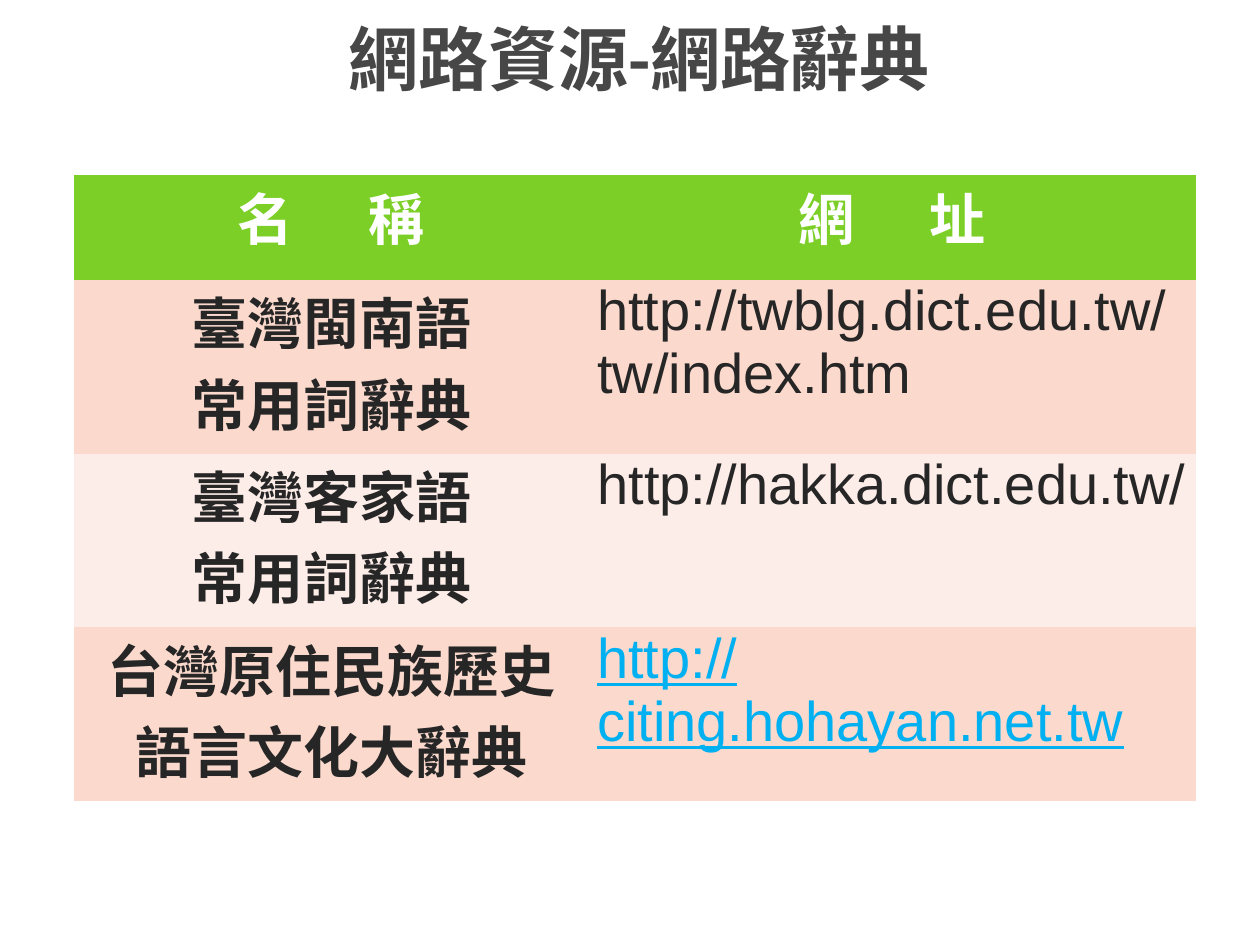
"""Build a slide that lists online dictionaries in a table."""
import pptx
import pptx.dml.color
import pptx.enum.text
import pptx.util

Inches = pptx.util.Inches
ALIGN = pptx.enum.text.PP_ALIGN
NO_STYLE = "{2D5ABB26-0587-4C30-8999-92F81FD0307C}"
INK = "262626"
LINK = "00B0F0"
WHITE = "FFFFFF"
HEADER_FILL = "7BCF27"
BAND_FILLS = ("FBDACD", "FDEDE8")
HEADERS = ("名稱", "網址")
DICTIONARIES = (
    ("臺灣閩南語\n常用詞辭典", "http://twblg.dict.edu.tw/tw/index.htm", ALIGN.LEFT, INK),
    ("臺灣客家語\n常用詞辭典", "http://hakka.dict.edu.tw/", ALIGN.CENTER, INK),
    ("台灣原住民族歷史語言文化大辭典", "http://citing.hohayan.net.tw", ALIGN.LEFT, LINK),
)


def color(value):
    """Return the colour for a hex string."""
    return pptx.dml.color.RGBColor.from_string(value)


def style_font(font, name, size, ink, bold):
    """Set the main properties of a font."""
    font.name = name
    font.size = pptx.util.Pt(size)
    font.bold = bold
    font.color.rgb = color(ink)


def add_title(slide, text):
    """Place and format the title."""
    title = slide.shapes.title
    title.left, title.top = Inches(0.48), Inches(0.08)
    title.width, title.height = Inches(9.19), Inches(0.75)
    title.text_frame.text = text
    title.text_frame.vertical_anchor = pptx.enum.text.MSO_ANCHOR.MIDDLE
    paragraph = title.text_frame.paragraphs[0]
    paragraph.alignment = ALIGN.CENTER
    style_font(paragraph.runs[0].font, "Calibri", 40, "474747", True)


def add_table(slide):
    """Add the empty two-column table without a built-in style."""
    frame = slide.shapes.add_table(
        len(DICTIONARIES) + 1, 2, Inches(0.59), Inches(1.39), Inches(8.9), Inches(4.97)
    )
    frame.element.xpath(".//a:tableStyleId")[0].text = NO_STYLE
    table = frame.table
    for column, width in zip(table.columns, (4.08, 4.82)):
        column.width = Inches(width)
    for index, row in enumerate(table.rows):
        row.height = Inches(1.38 if index else 0.83)
    return table


def fill_cell(cell, text, fill, ink, bold=True, alignment=ALIGN.CENTER):
    """Write and format one table cell."""
    cell.fill.solid()
    cell.fill.fore_color.rgb = color(fill)
    cell.margin_left = cell.margin_right = Inches(0.07)
    cell.margin_top = cell.margin_bottom = 0
    cell.text_frame.text = text
    for paragraph in cell.text_frame.paragraphs:
        paragraph.alignment = alignment
        for run in paragraph.runs:
            style_font(run.font, "Arial", 32, ink, bold)


def fill_header(cell, text):
    """Write a two-character heading with a wide gap in the middle."""
    fill_cell(cell, text[0] + " ", HEADER_FILL, WHITE)
    paragraph = cell.text_frame.paragraphs[0]
    paragraph.runs[0].font.element.set("spc", "1780") if hasattr(
        paragraph.runs[0].font, "element"
    ) else cell.text_frame.paragraphs[0].runs[0]._r.get_or_add_rPr().set("spc", "1780")
    run = paragraph.add_run()
    run.text = text[1]
    style_font(run.font, "Arial", 32, WHITE, True)


def main():
    """Build and save the presentation."""
    presentation = pptx.Presentation()
    presentation.slide_width, presentation.slide_height = Inches(10), Inches(7.5)
    slide = presentation.slides.add_slide(presentation.slide_layouts[5])
    add_title(slide, "網路資源-網路辭典")
    table = add_table(slide)
    for column, header in enumerate(HEADERS):
        fill_header(table.cell(0, column), header)
    for index, (name, address, alignment, ink) in enumerate(DICTIONARIES):
        fill = BAND_FILLS[index % 2]
        fill_cell(table.cell(index + 1, 0), name, fill, INK)
        address_cell = table.cell(index + 1, 1)
        fill_cell(address_cell, address, fill, ink, False, alignment)
        address_cell.text_frame.paragraphs[0].runs[0].font.underline = ink == LINK
    presentation.save("out.pptx")


if __name__ == "__main__":
    main()
